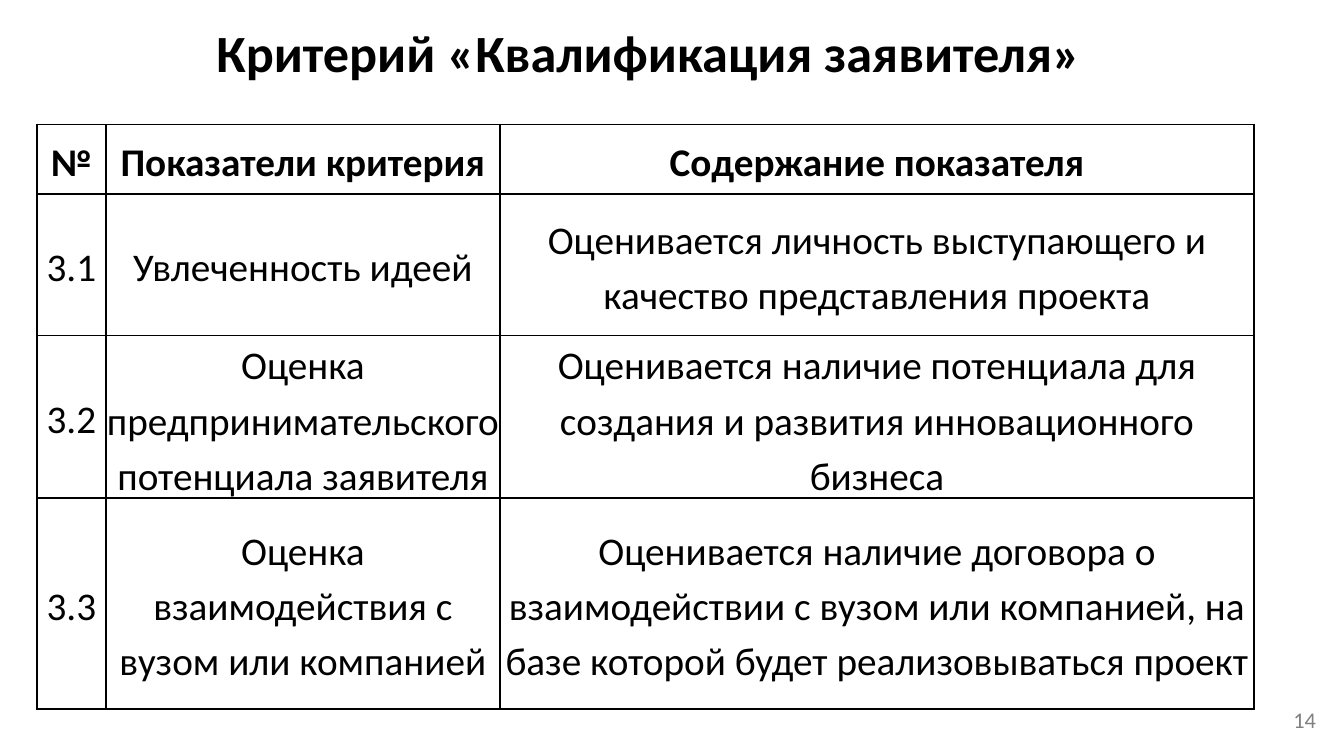
from lxml.etree import SubElement
from pptx import Presentation
from pptx.dml.color import RGBColor
from pptx.enum.text import MSO_ANCHOR, PP_ALIGN
from pptx.oxml.ns import qn
from pptx.util import Cm, Pt

ROWS = [
    ("№", "Показатели критерия", "Содержание показателя"),
    ("3.1", "Увлеченность идеей",
     "Оценивается личность выступающего и качество представления проекта"),
    ("3.2", "Оценка предпринимательского потенциала заявителя",
     "Оценивается наличие потенциала для создания и развития инновационного бизнеса"),
    ("3.3", "Оценка взаимодействия с вузом или компанией",
     "Оценивается наличие договора о взаимодействии с вузом или компанией, "
     "на базе которой будет реализовываться проект"),
]
COLUMN_WIDTHS = (1.3, 7.45, 14.25)
ROW_HEIGHTS = (1.32, 2.67, 3.07, 3.99)


def color(value):
    return RGBColor.from_string(value)


class SlideBuilder:
    font_name = "Calibri"
    text_color = "000000"
    muted_color = "808080"
    border_color = "000000"

    def __init__(self, slide):
        self.slide = slide

    def remove_margins(self, holder):
        """Clear the margins of a text frame or a cell and centre it vertically."""
        holder.vertical_anchor = MSO_ANCHOR.MIDDLE
        holder.margin_left = holder.margin_right = 0
        holder.margin_top = holder.margin_bottom = 0

    def style(self, paragraph, text, size, align=PP_ALIGN.CENTER, bold=False, fill=None):
        paragraph.text = text
        paragraph.alignment = align
        font = paragraph.font
        font.name, font.size, font.bold = self.font_name, Pt(size), bold
        font.color.rgb = color(fill or self.text_color)

    def title(self, text, left, top, width, height):
        shape = self.slide.shapes.title
        shape.left, shape.top = Cm(left), Cm(top)
        shape.width, shape.height = Cm(width), Cm(height)
        self.remove_margins(shape.text_frame)
        self.style(shape.text_frame.paragraphs[0], text, 28, bold=True)

    def page_number(self, number, left, top, width, height):
        box = self.slide.shapes.add_textbox(Cm(left), Cm(top), Cm(width), Cm(height))
        frame = box.text_frame
        frame.word_wrap = True
        self.remove_margins(frame)
        frame.margin_right = Cm(0.25)
        self.style(frame.paragraphs[0], str(number), 12, PP_ALIGN.RIGHT,
                   fill=self.muted_color)

    def table(self, rows, left, top, column_widths, row_heights):
        table = self.slide.shapes.add_table(
            len(rows), len(column_widths), Cm(left), Cm(top),
            Cm(sum(column_widths)), Cm(sum(row_heights))).table
        for column, width in zip(table.columns, column_widths):
            column.width = Cm(width)
        for row, height in zip(table.rows, row_heights):
            row.height = Cm(height)
        for row_index, texts in enumerate(rows):
            for column_index, text in enumerate(texts):
                self.cell(table.cell(row_index, column_index), text, bold=row_index == 0)

    def cell(self, cell, text, bold):
        self.remove_margins(cell)
        paragraph = cell.text_frame.paragraphs[0]
        self.style(paragraph, text, 21, bold=bold)
        paragraph.line_spacing = 1.15
        self.borders(cell)
        cell.fill.background()

    def borders(self, cell):
        properties = cell._tc.get_or_add_tcPr()
        for side in ("a:lnL", "a:lnR", "a:lnT", "a:lnB"):
            line = SubElement(properties, qn(side), w=str(Pt(1)))
            fill = SubElement(line, qn("a:solidFill"))
            SubElement(fill, qn("a:srgbClr"), val=self.border_color)


def main():
    presentation = Presentation()
    presentation.slide_width, presentation.slide_height = Cm(25.4), Cm(14.29)
    title_only = presentation.slide_layouts[5]
    builder = SlideBuilder(presentation.slides.add_slide(title_only))
    builder.title("Критерий «Квалификация заявителя»", 0, 0.53, 24.5, 0.9)
    builder.page_number(14, 18.2, 13.23, 6.92, 0.76)
    builder.table(ROWS, 0.7, 2.35, COLUMN_WIDTHS, ROW_HEIGHTS)
    presentation.save("out.pptx")


if __name__ == "__main__":
    main()
